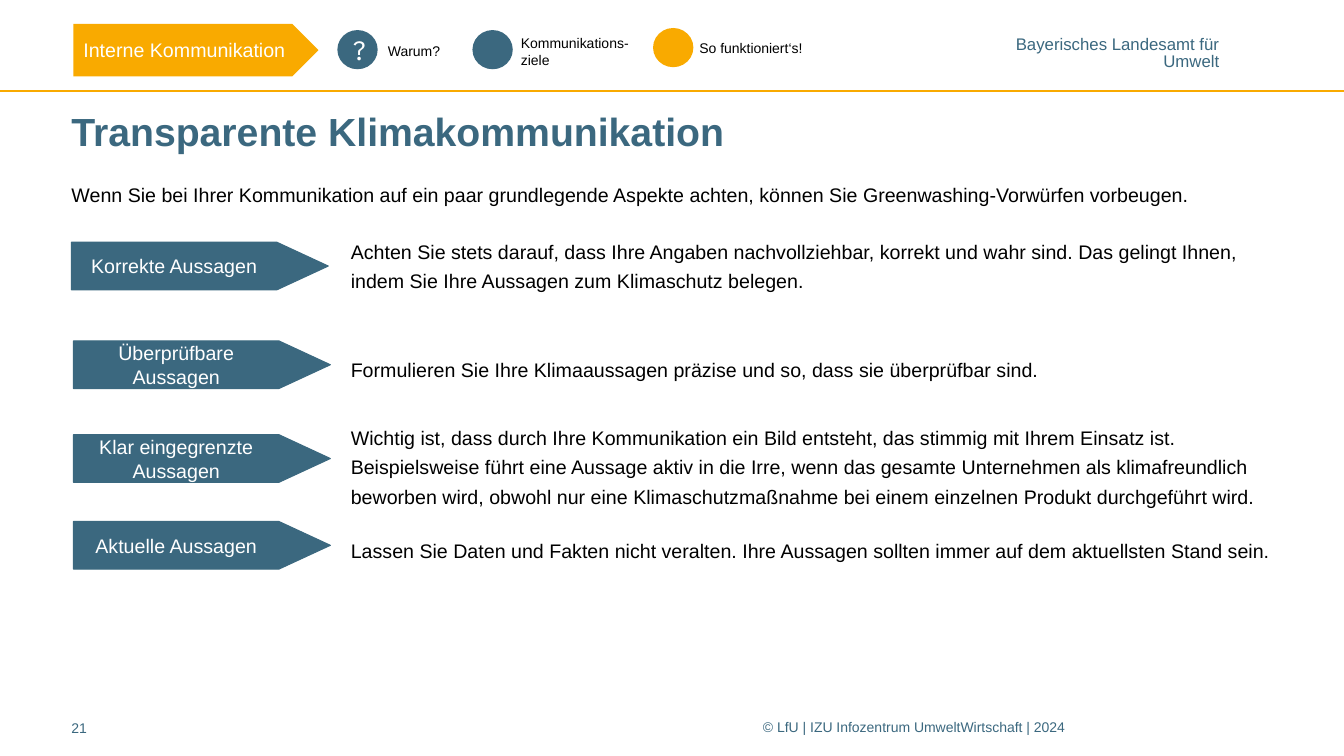
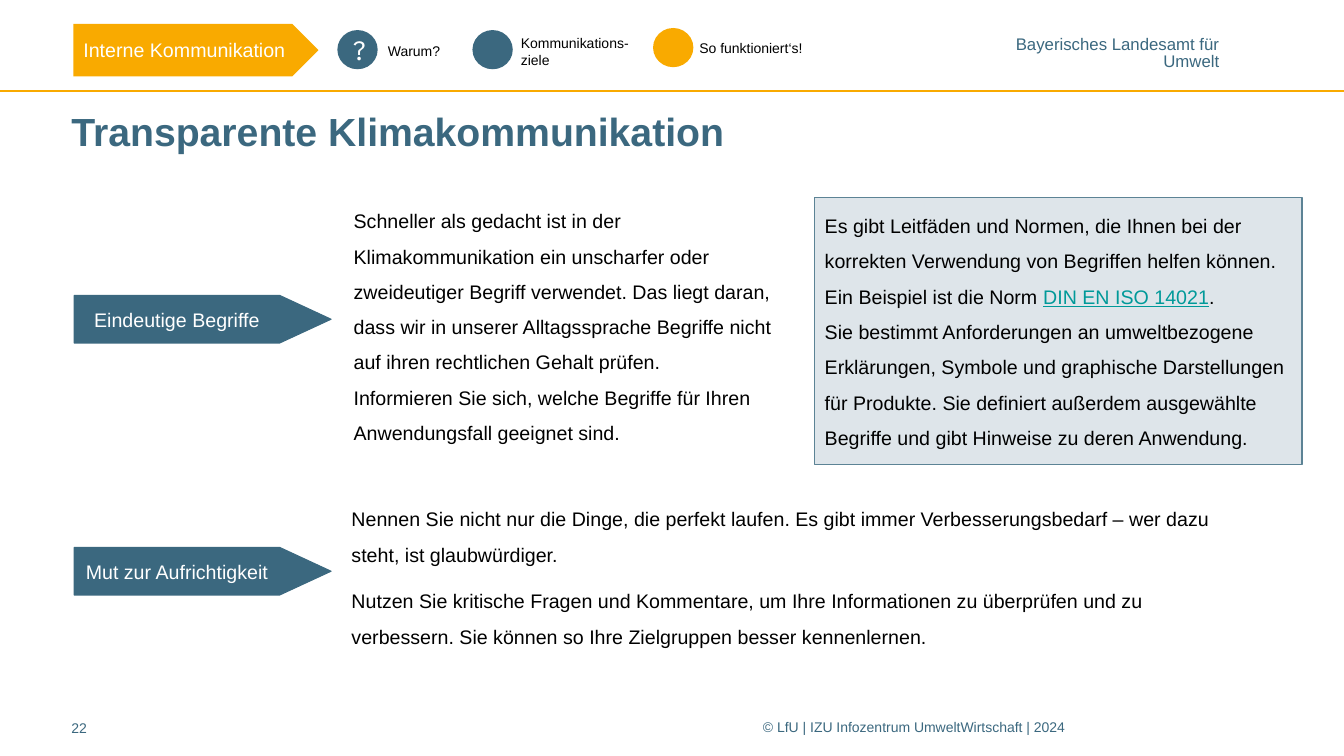
from copy import deepcopy

from pptx import Presentation
from pptx.dml.color import RGBColor
from pptx.enum.shapes import MSO_CONNECTOR, MSO_SHAPE
from pptx.enum.text import MSO_ANCHOR, PP_ALIGN
from pptx.oxml.ns import qn
from pptx.util import Pt
from lxml import etree

BLUE, ORANGE, BLACK, WHITE = "3B687F", "F9AA00", "000000", "FFFFFF"
PALE, EDGE, TEAL = "DEE5EA", "5C8395", "009999"
FLUSH = {"margin_left": 0, "margin_right": 0}
MIDDLE = {"vertical_anchor": MSO_ANCHOR.MIDDLE}
TOP = {"vertical_anchor": MSO_ANCHOR.TOP}
LEFT = {"alignment": PP_ALIGN.LEFT}
CENTER = {"alignment": PP_ALIGN.CENTER}
NORM = "DIN EN ISO 14021"
TAG_LENGTH, TAG_HEIGHT = 183.5, 34
CIRCLE_WIDTH, CIRCLE_HEIGHT = 28.8, 28

color = RGBColor.from_string


def write(box, paragraphs, size, ink, frame={}, para_format={}, font={}):
    text_frame = box.text_frame
    for name, value in {"word_wrap": True, **frame}.items():
        setattr(text_frame, name, value)
    for index, pieces in enumerate(paragraphs):
        para = text_frame.add_paragraph() if index else text_frame.paragraphs[0]
        for name, value in para_format.items():
            setattr(para, name, value)
        for piece in pieces:
            if piece == "\v":
                para.add_line_break()
                continue
            span = para.add_run()
            span.text = piece
            for name, value in {"name": "Arial", "size": Pt(size), **font}.items():
                setattr(span.font, name, value)
            span.font.color.rgb = color(ink)
            if piece == NORM:
                span.font.color.rgb = color(TEAL)
                span.font.underline = True
        for line_break in para._p.findall(qn("a:br")):
            line_break.insert(0, deepcopy(para.runs[0]._r.rPr))


def add_panel(page, kind, place, fill, edge=None, weight=0.75):
    panel = page.shapes.add_shape(kind, *map(Pt, place))
    panel.shadow.inherit = False
    panel.fill.solid()
    panel.fill.fore_color.rgb = color(fill)
    if edge:
        panel.line.color.rgb = color(edge)
        panel.line.width = Pt(weight)
    else:
        panel.line.fill.background()
    return panel


topics = [
    ((241, 21.5), BLUE, "?", (270, 26.5, 70, 19.5), "Warum?"),
    ((337.5, 21.5), BLUE, "", (365, 21, 92, 31.5), "Kommunikations-ziele"),
    ((466.5, 20), ORANGE, "", (492.5, 24.5, 88.5, 19.5), "So funktioniert‘s!"),
]

slides = [
    {
        "number": "21",
        "intro": "Wenn Sie bei Ihrer Kommunikation auf ein paar grundlegende Aspekte achten, "
                 "können Sie Greenwashing-Vorwürfen vorbeugen.",
        "tags": [
            (51, 173, "Korrekte Aussagen"),
            (52.5, 243.5, "Überprüfbare Aussagen"),
            (52.5, 310.5, "Klar eingegrenzte Aussagen"),
            (52.5, 372.5, "Aktuelle Aussagen"),
        ],
        "texts": [
            ((243.5, 163.5, 664.5, 47.5), 1.25, [[
                "Achten Sie stets darauf, dass Ihre Angaben nachvollziehbar, korrekt und wahr sind. "
                "Das gelingt Ihnen, indem Sie Ihre Aussagen zum Klimaschutz belegen."]]),
            ((243.5, 243.5, 664.5, 29.5), 1.5, [[
                "Formulieren Sie Ihre Klimaaussagen präzise und so, dass sie überprüfbar sind."]]),
            ((243.5, 296.5, 664.5, 58.5), 1.25, [[
                "Wichtig ist, dass durch Ihre Kommunikation ein Bild entsteht, "
                "das stimmig mit Ihrem Einsatz ist.",
                "\v",
                "Beispielsweise führt eine Aussage aktiv in die Irre, wenn das gesamte Unternehmen "
                "als klimafreundlich beworben wird, obwohl nur eine Klimaschutzmaßnahme "
                "bei einem einzelnen Produkt durchgeführt wird."]]),
            ((243.5, 373, 674, 29.5), 1.5, [[
                "Lassen Sie Daten und Fakten nicht veralten. "
                "Ihre Aussagen sollten immer auf dem aktuellsten Stand sein."]]),
        ],
    },
    {
        "number": "22",
        "tags": [
            (53, 211, "Eindeutige Begriffe"),
            (53, 391, "Mut zur Aufrichtigkeit"),
        ],
        "texts": [
            ((244, 350.5, 645, 114), 1.5, [
                ["Nennen Sie nicht nur die Dinge, die perfekt laufen. Es gibt immer "
                 "Verbesserungsbedarf – wer dazu steht, ist glaubwürdiger."],
                ["Nutzen Sie kritische Fragen und Kommentare, um Ihre Informationen zu überprüfen "
                 "und zu verbessern. Sie können so Ihre Zielgruppen besser kennenlernen."]]),
            ((245.5, 137.5, 319.5, 182), 1.5, [[
                "Schneller als gedacht ist in der Klimakommunikation ein unscharfer oder "
                "zweideutiger Begriff verwendet. Das liegt daran, dass wir in unserer "
                "Alltagssprache Begriffe nicht auf ihren rechtlichen Gehalt prüfen.",
                "\v",
                "Informieren Sie sich, welche Begriffe für Ihren Anwendungsfall geeignet sind."]]),
        ],
        "note": [[
            "Es gibt Leitfäden und Normen, die Ihnen bei der korrekten Verwendung von Begriffen "
            "helfen können. Ein Beispiel ist die Norm ",
            NORM,
            ".",
            "\v",
            "Sie bestimmt Anforderungen an umweltbezogene Erklärungen, Symbole und graphische "
            "Darstellungen für Produkte. Sie definiert außerdem ausgewählte Begriffe und gibt "
            "Hinweise zu deren Anwendung."]],
    },
]

deck = Presentation()
deck.slide_width, deck.slide_height = Pt(960), Pt(540)

for content in slides:
    page = deck.slides.add_slide(deck.slide_layouts[6])

    rule = page.shapes.add_connector(MSO_CONNECTOR.STRAIGHT, Pt(0), Pt(65), Pt(960), Pt(65))
    rule.line.color.rgb = color(ORANGE)
    rule.line.width = Pt(2)
    etree.SubElement(rule._element.spPr, qn("a:effectLst"))

    chapter = add_panel(page, MSO_SHAPE.PENTAGON, (52.5, 17, 175, 37.5), ORANGE)
    write(chapter, [["Interne Kommunikation"]], 14, WHITE, MIDDLE, LEFT)

    for corner, fill, sign, label_place, label in topics:
        circle = add_panel(page, MSO_SHAPE.OVAL, (*corner, CIRCLE_WIDTH, CIRCLE_HEIGHT), fill)
        if sign:
            write(circle, [[sign]], 20, WHITE, MIDDLE, CENTER, {"name": "League Spartan"})
        box = page.shapes.add_textbox(*map(Pt, label_place))
        write(box, [[label]], 10, BLACK)

    agency = page.shapes.add_textbox(Pt(725), Pt(26.5), Pt(146), Pt(24.5))
    write(agency, [["Bayerisches Landesamt für"], ["Umwelt"]], 12, BLUE,
          {**FLUSH, "margin_top": 0, "margin_bottom": 0, "word_wrap": False},
          {"alignment": PP_ALIGN.RIGHT, "line_spacing": 0.85})

    title = page.shapes.add_textbox(Pt(51), Pt(73.5), Pt(878.5), Pt(39.5))
    write(title, [["Transparente Klimakommunikation"]], 28, BLUE,
          {**FLUSH, **MIDDLE}, font={"bold": True})

    if "intro" in content:
        intro = page.shapes.add_textbox(Pt(51), Pt(128), Pt(866), Pt(34))
        write(intro, [[content["intro"]]], 14, BLACK, FLUSH, {"line_spacing": Pt(16)})

    for left, top, label in content["tags"]:
        shift = (TAG_LENGTH - TAG_HEIGHT) / 2
        tag = add_panel(page, MSO_SHAPE.FLOWCHART_OFFPAGE_CONNECTOR,
                        (left + shift, top - shift, TAG_HEIGHT, TAG_LENGTH), BLUE, BLUE)
        tag.rotation = 270
        write(tag, [[label]], 14, WHITE, MIDDLE, CENTER)
        tag.text_frame._txBody.bodyPr.set("vert", "vert")

    for place, spacing, paragraphs in content["texts"]:
        box = page.shapes.add_textbox(*map(Pt, place))
        write(box, paragraphs, 14, BLACK,
              para_format={"line_spacing": spacing, "space_after": Pt(8)})

    if "note" in content:
        note = add_panel(page, MSO_SHAPE.RECTANGLE, (582, 141, 348, 191), PALE, EDGE, 1)
        write(note, content["note"], 14, BLACK, TOP,
              {**LEFT, "line_spacing": 1.5, "space_after": Pt(8)})

    footers = [
        ((51, 510.5, 50, 22), content["number"]),
        ((545, 510, 386, 22), "© LfU | IZU Infozentrum UmweltWirtschaft | 2024"),
    ]
    for place, text in footers:
        footer = page.shapes.add_textbox(*map(Pt, place))
        write(footer, [[text]], 10, BLUE, FLUSH)

deck.save("out.pptx")
